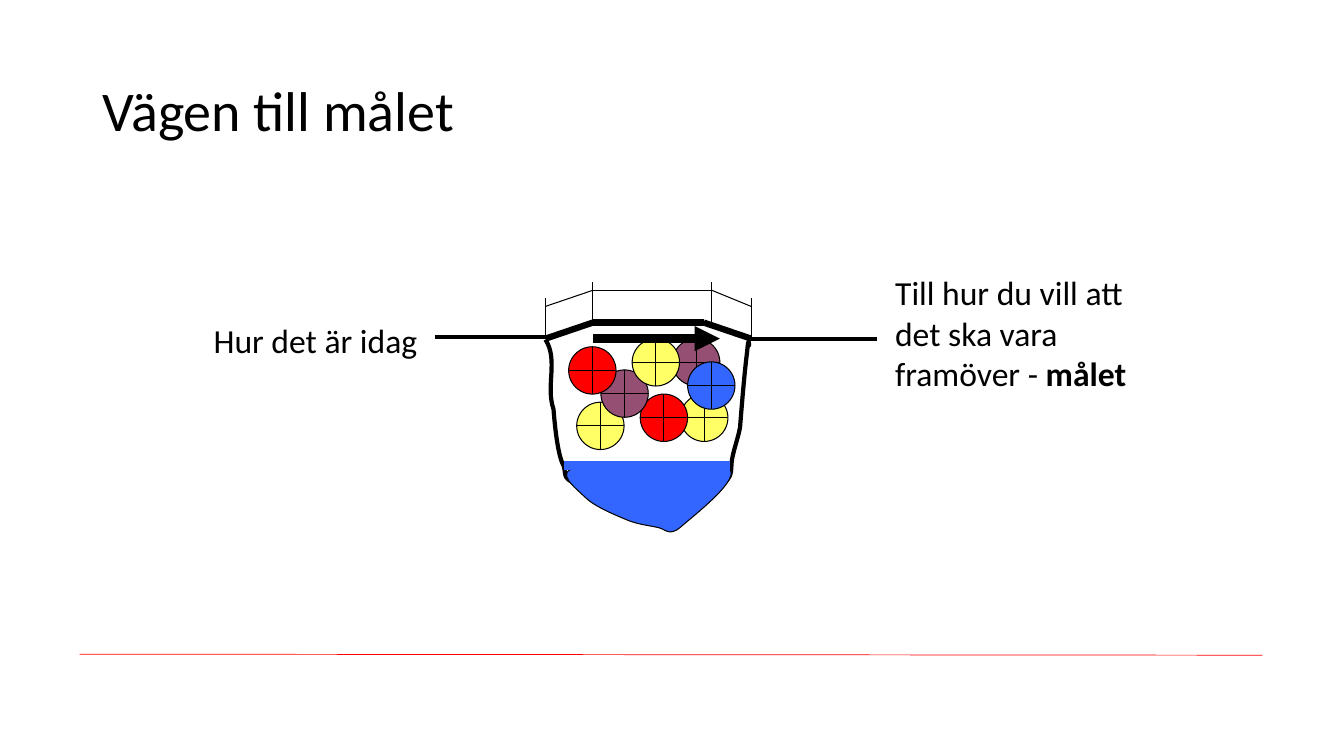
from lxml.etree import SubElement
from pptx import Presentation
from pptx.dml.color import RGBColor
from pptx.enum.shapes import MSO_CONNECTOR as CONNECTOR, MSO_SHAPE as SHAPE
from pptx.enum.text import MSO_ANCHOR as ANCHOR, MSO_AUTO_SIZE as AUTO_SIZE
from pptx.oxml.ns import qn
from pptx.util import Inches, Pt

rgb = RGBColor.from_string
BLACK, RED, BLUE, YELLOW, PURPLE = "000000", "FF0000", "3366FF", "FFFF66", "954F72"

prs = Presentation()
prs.slide_width, prs.slide_height = Inches(13.33), Inches(7.5)
slide = prs.slides.add_slide(prs.slide_layouts[6])
shapes = slide.shapes


def add_line(start, end, width, color=BLACK):
    line = shapes.add_connector(CONNECTOR.STRAIGHT, *map(Inches, start + end))
    line.line.color.rgb = rgb(color)
    line.line.width = Pt(width)
    SubElement(line._element.spPr, qn("a:effectLst"))
    return line


def add_text(box, size, *texts):
    """Add a one-paragraph text box with one run per text, and return its frame."""
    frame = shapes.add_textbox(*map(Inches, box)).text_frame
    frame.word_wrap = True
    paragraph = frame.paragraphs[0]
    paragraph.font.size = Pt(size)
    paragraph.font.name = "Calibri"
    paragraph.font.color.rgb = rgb(BLACK)
    for text in texts:
        paragraph.add_run().text = text
    return frame


add_line((0.79, 6.49), (12.52, 6.5), 0.5, RED)

title = add_text((0.92, 0.4, 11.5, 1.45), 40, "Vägen till målet")
title.vertical_anchor = ANCHOR.MIDDLE
title.paragraphs[0].line_spacing = 0.9
today = add_text((2.02, 3.12, 2.31, 0.5), 24, "Hur det är idag")
goal = add_text((8.78, 2.65, 2.54, 1.31), 24,
                "Till hur du vill att det ska vara framöver - ", "målet")
goal.paragraphs[0].runs[1].font.bold = True
for label in (today, goal):
    label.auto_size = AUTO_SIZE.SHAPE_TO_FIT_TEXT

# Balls, from back to front
balls = [(6.67, 3.36, PURPLE), (6.75, 3.91, YELLOW), (5.72, 3.99, YELLOW), (6.35, 3.91, RED),
         (5.96, 3.67, PURPLE), (6.82, 3.59, BLUE), (6.27, 3.36, YELLOW), (5.64, 3.44, RED)]
for left, top, color in balls:
    ball = shapes.add_shape(SHAPE.FLOWCHART_OR, *map(Inches, (left, top, 0.47, 0.47)))
    ball.shadow.inherit = False
    ball.fill.solid()
    ball.fill.fore_color.rgb = rgb(color)
    ball.line.color.rgb = rgb(BLACK)
    ball.line.width = Pt(0.75)

# Bowl and water: a start point, then Bézier segments of two controls and an end
bowl = [(5.41, 3.37),
        (5.54, 3.57), (5.41, 3.83), (5.49, 4.06), (5.5, 4.19), (5.53, 4.52), (5.59, 4.62),
        (5.61, 4.67), (5.59, 4.73), (5.64, 4.76), (5.67, 4.79), (5.72, 4.79), (5.76, 4.81),
        (5.96, 4.87), (6.15, 4.89), (6.36, 4.91), (6.6, 5.03), (6.74, 4.87), (6.89, 4.72),
        (6.91, 4.73), (6.94, 4.74), (6.97, 4.74), (7.02, 4.75), (7.09, 4.72), (7.11, 4.76),
        (7.17, 4.84), (6.98, 4.95), (7.14, 4.85), (7.16, 4.8), (7.22, 4.77), (7.24, 4.72),
        (7.26, 4.67), (7.25, 4.61), (7.26, 4.56), (7.28, 4.45), (7.32, 4.35), (7.34, 4.24),
        (7.36, 3.99), (7.38, 3.74), (7.41, 3.49), (7.43, 3.27), (7.43, 3.5), (7.43, 3.41)]
water = [(5.72, 4.64),
         (5.96, 4.59), (7.05, 4.54), (7.22, 4.64), (7.39, 4.73), (6.86, 5.13), (6.75, 5.23),
         (6.63, 5.33), (6.6, 5.24), (6.51, 5.23), (6.42, 5.21), (6.31, 5.2), (6.2, 5.15),
         (6.08, 5.1), (5.89, 5.02), (5.8, 4.93), (5.71, 4.84), (5.49, 4.68), (5.72, 4.64)]
for curve, fill, width in [(bowl, None, 3), (water, BLUE, 0.75)]:
    start, *points = [tuple(map(Inches, point)) for point in curve]
    builder = shapes.build_freeform(*start, scale=1.0)
    builder.add_line_segments(points, close=fill is not None)
    outline = builder.convert_to_shape()
    # Turn every three straight segments into one Bézier segment
    segments = list(outline._element.iter(qn("a:lnTo")))
    for i in range(0, len(segments), 3):
        segments[i].tag = qn("a:cubicBezTo")
        for extra in segments[i + 1:i + 3]:
            segments[i].append(extra[0])
            extra.getparent().remove(extra)
    outline.shadow.inherit = False
    if fill:
        outline.fill.solid()
        outline.fill.fore_color.rgb = rgb(fill)
    else:
        outline.fill.background()
    outline.line.color.rgb = rgb(BLACK)
    outline.line.width = Pt(width)

# Ground on both sides, the lid and the thin frame above it
add_line((4.31, 3.34), (5.41, 3.34), 3)
add_line((7.44, 3.36), (8.7, 3.36), 3)
lid = [(5.41, 3.36), (5.88, 3.2), (6.98, 3.2), (7.45, 3.36)]
frame_top = [(5.41, 3.04), (5.88, 2.88), (7.06, 2.88), (7.45, 3.04)]
for corners, width in [(lid, 4.5), (frame_top, 0.75)]:
    for start, end in zip(corners, corners[1:]):
        add_line(start, end, width)
for x, y in frame_top:
    add_line((x, y - 0.08), (x, y + 0.32), 0.75)

add_line((5.59, 4.62), (7.24, 4.62), 6, BLUE)
arrow = add_line((5.88, 3.36), (7.14, 3.36), 6)
SubElement(arrow.line._get_or_add_ln(), qn("a:tailEnd"), type="triangle")

prs.save("out.pptx")
